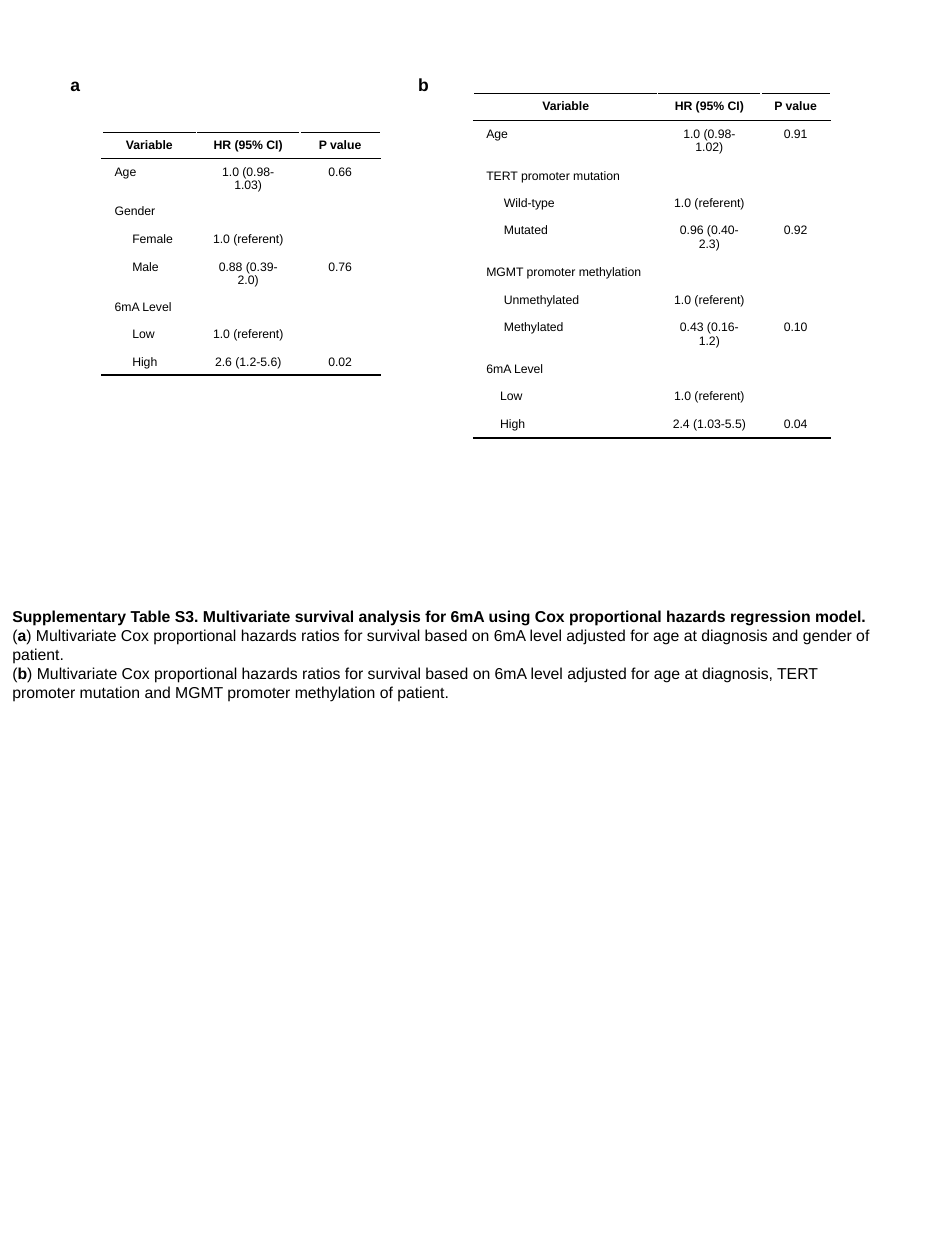
from lxml import etree
from pptx import Presentation
from pptx.dml.color import RGBColor
from pptx.enum.text import PP_ALIGN
from pptx.oxml.ns import qn
from pptx.util import Inches, Pt

BLACK = RGBColor(0, 0, 0)
FONT = "Arial"
LEFT, CENTER = PP_ALIGN.LEFT, PP_ALIGN.CENTER
CELL_MARGIN = 0.1
HEADER = ("Variable", "HR (95% CI)", "P value")
REFERENT = "1.0 (referent)"

GENDER_ROWS = [
    (0, "Age", "1.0 (0.98-1.03)", "0.66"),
    (0, "Gender", "", ""),
    (0.14, "Female", REFERENT, ""),
    (0.14, "Male", "0.88 (0.39-2.0)", "0.76"),
    (0, "6mA Level", "", ""),
    (0.14, "Low", REFERENT, ""),
    (0.14, "High", "2.6 (1.2-5.6)", "0.02"),
]
MARKER_ROWS = [
    (0, "Age", "1.0 (0.98-1.02)", "0.91"),
    (0, "TERT promoter mutation", "", ""),
    (0.14, "Wild-type", REFERENT, ""),
    (0.14, "Mutated", "0.96 (0.40-2.3)", "0.92"),
    (0, "MGMT promoter methylation", "", ""),
    (0.14, "Unmethylated", REFERENT, ""),
    (0.14, "Methylated", "0.43 (0.16-1.2)", "0.10"),
    (0, "6mA Level", "", ""),
    (0.11, "Low", REFERENT, ""),
    (0.11, "High", "2.4 (1.03-5.5)", "0.04"),
]
CAPTION = [
    [("Supplementary Table S3. Multivariate survival analysis for 6mA using Cox "
      "proportional hazards regression model.", True)],
    [("(", False), ("a", True),
     (") Multivariate Cox proportional hazards ratios for survival based on 6mA level "
      "adjusted for age at diagnosis and gender of patient.", False)],
    [("(", False), ("b", True),
     (") Multivariate Cox proportional hazards ratios for survival based on 6mA level "
      "adjusted for age at diagnosis, TERT promoter mutation and MGMT promoter "
      "methylation of patient.", False)],
]


def add_run(paragraph, text, size, bold):
    """Append one formatted run to a paragraph."""
    run = paragraph.add_run()
    run.text = text
    run.font.name = FONT
    run.font.size = Pt(size)
    run.font.bold = bold
    run.font.color.rgb = BLACK


def add_rule(cell, side):
    """Draw a one-point rule on a cell side, lnT or lnB."""
    line = etree.SubElement(cell._tc.get_or_add_tcPr(), qn(f"a:{side}"), w=str(Pt(1)))
    fill = etree.SubElement(line, qn("a:solidFill"))
    etree.SubElement(fill, qn("a:srgbClr"), val=str(BLACK))


def fill_cell(cell, text, alignment, bold, indent):
    """Write a table cell at seven points, keeping empty cells equally low."""
    cell.margin_left = Inches(CELL_MARGIN + indent)
    cell.fill.background()
    paragraph = cell.text_frame.paragraphs[0]
    paragraph.alignment = alignment
    if text:
        add_run(paragraph, text, 7, bold)
    else:
        etree.SubElement(paragraph._p, qn("a:endParaRPr"), sz="700")


def add_hazard_table(slide, left, top, column_widths, row_height, rows):
    """Add a ruled table of hazard ratios at the given corner."""
    records = [(0, *HEADER), *rows]
    last = len(records) - 1
    table = slide.shapes.add_table(
        len(records), len(HEADER), Inches(left), Inches(top),
        Inches(sum(column_widths)), Inches(row_height * len(records))).table
    table.first_row = False
    table.horz_banding = False
    for column, width in zip(table.columns, column_widths):
        column.width = Inches(width)
    for row_index, (indent, *texts) in enumerate(records):
        is_header = row_index == 0
        for column_index, text in enumerate(texts):
            cell = table.cell(row_index, column_index)
            if row_index in (0, 1):
                add_rule(cell, "lnT")
            if row_index in (0, last):
                add_rule(cell, "lnB")
            is_label = column_index == 0
            alignment = LEFT if is_label and not is_header else CENTER
            fill_cell(cell, text, alignment, is_header, indent if is_label else 0)


def add_panel_letter(slide, left, top, letter):
    """Add the bold letter that names a panel."""
    box = slide.shapes.add_textbox(Inches(left), Inches(top), Inches(0.25), Inches(0.27))
    box.text_frame.word_wrap = False
    paragraph = box.text_frame.paragraphs[0]
    paragraph.alignment = CENTER
    add_run(paragraph, letter, 10, True)


def add_caption(slide, left, top, width, height):
    """Add the table caption with its bold heading and panel notes."""
    box = slide.shapes.add_textbox(Inches(left), Inches(top), Inches(width), Inches(height))
    frame = box.text_frame
    frame.word_wrap = True
    for index, runs in enumerate(CAPTION):
        paragraph = frame.add_paragraph() if index else frame.paragraphs[0]
        for text, bold in runs:
            add_run(paragraph, text, 9, bold)


def main():
    """Build and save the presentation."""
    presentation = Presentation()
    presentation.slide_width = Inches(7.5)
    presentation.slide_height = Inches(10)
    slide = presentation.slides.add_slide(presentation.slide_layouts[6])
    add_hazard_table(slide, 0.81, 1.05, (0.75, 0.82, 0.64), 0.19, GENDER_ROWS)
    add_panel_letter(slide, 0.46, 0.54, "a")
    add_caption(slide, 0, 4.77, 7.04, 0.86)
    add_hazard_table(slide, 3.76, 0.74, (1.46, 0.82, 0.55), 0.15, MARKER_ROWS)
    add_panel_letter(slide, 3.22, 0.54, "b")
    presentation.save("out.pptx")


if __name__ == "__main__":
    main()
